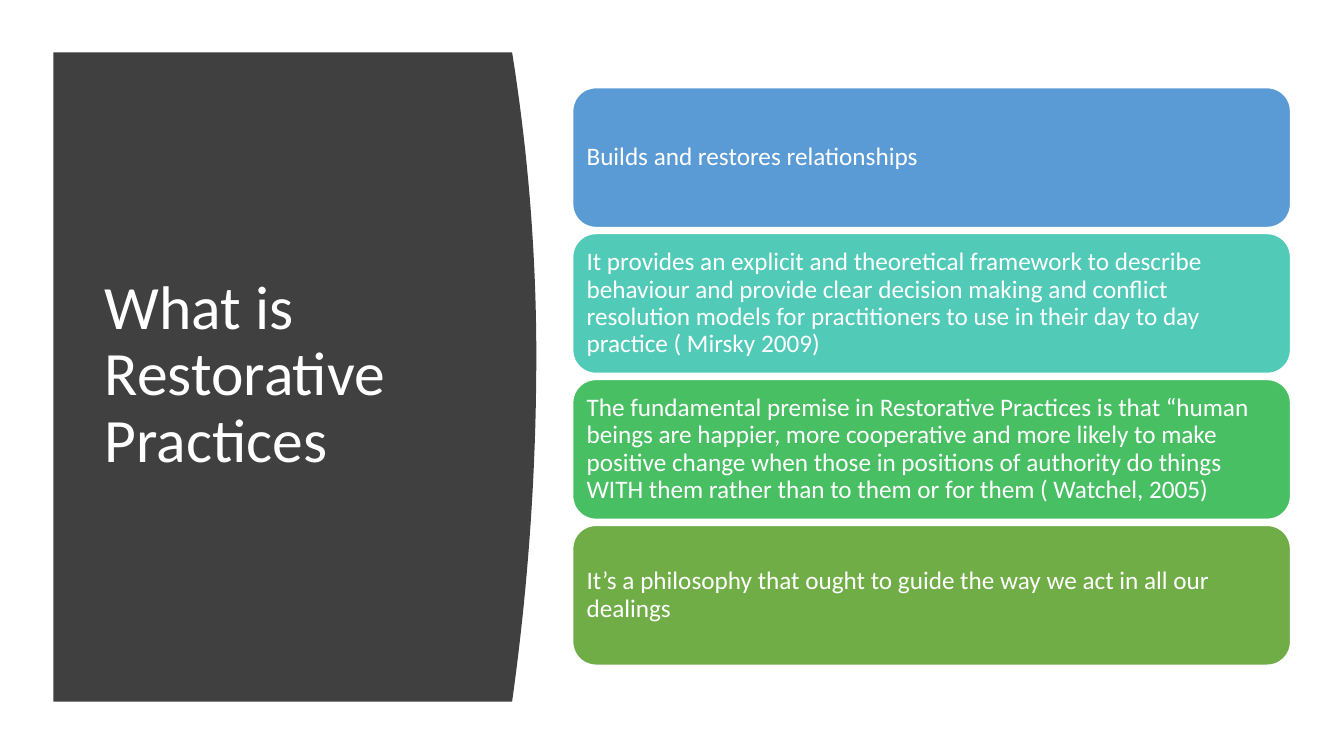
from pptx import Presentation
from pptx.dml.color import RGBColor
from pptx.enum.shapes import MSO_SHAPE
from pptx.enum.text import MSO_ANCHOR, PP_ALIGN
from pptx.util import Inches, Pt

COLORS = {
    "panel": "404040",
    "text": "FFFFFF",
    "blue": "5B9BD5",
    "teal": "52CAB8",
    "green": "49BF64",
    "olive": "70AD47",
}

CARDS = [
    ("blue", "Builds and restores relationships"),
    ("teal", "It provides an explicit and theoretical framework to describe behaviour "
             "and provide clear decision making and conflict resolution models for "
             "practitioners to use in their day to day practice ( Mirsky 2009)"),
    ("green", "The fundamental premise in Restorative Practices is that “human beings "
              "are happier, more cooperative and more likely to make positive change "
              "when those in positions of authority do things WITH them rather than to "
              "them or for them ( Watchel, 2005)"),
    ("olive", "It’s a philosophy that ought to guide the way we act in all our dealings"),
]


def color(name):
    """Return the named palette colour."""
    return RGBColor.from_string(COLORS[name])


def write_text(shape, text, size, inset_x, inset_y):
    """Fill a shape with one left-aligned, vertically centred paragraph."""
    frame = shape.text_frame
    frame.text = text
    frame.word_wrap = True
    frame.vertical_anchor = MSO_ANCHOR.MIDDLE
    frame.margin_left = frame.margin_right = Inches(inset_x)
    frame.margin_top = frame.margin_bottom = Inches(inset_y)
    paragraph = frame.paragraphs[0]
    paragraph.alignment = PP_ALIGN.LEFT
    paragraph.line_spacing = 0.9
    font = paragraph.runs[0].font
    font.name = "Calibri"
    font.size = Pt(size)
    font.color.rgb = color("text")


def add_title_panel(slide, left, top, width, height):
    """Draw the dark panel with a bulging right edge and place the title on it."""
    bulge, apex, steps = 0.24, 3.01, 40
    edge = []
    for step in range(steps + 1):
        y = height * step / steps
        reach = apex if y < apex else height - apex
        x = width - bulge * ((y - apex) / reach) ** 2
        edge.append((Inches(left + x), Inches(top + y)))
    builder = slide.shapes.build_freeform(Inches(left), Inches(top))
    builder.add_line_segments(edge + [(Inches(left), Inches(top + height))], close=True)
    panel = builder.convert_to_shape()
    panel.shadow.inherit = False
    panel.fill.solid()
    panel.fill.fore_color.rgb = color("panel")
    panel.line.fill.background()

    title = slide.shapes.title
    title.left, title.top = Inches(left + 0.41), Inches(top + 0.59)
    title.width, title.height = Inches(3.74), Inches(5.24)
    write_text(title, "What is Restorative Practices", 44, 0.1, 0.05)
    tree = slide.shapes._spTree
    tree.remove(panel._element)
    tree.insert(tree.index(title._element), panel._element)


def add_cards(slide, left, top, width, height):
    """Stack the rounded statement cards evenly in the given box."""
    gap = 0.06
    card_height = (height - gap * (len(CARDS) - 1)) / len(CARDS)
    for index, (fill, text) in enumerate(CARDS):
        card = slide.shapes.add_shape(
            MSO_SHAPE.ROUNDED_RECTANGLE,
            Inches(left), Inches(top + index * (card_height + gap)),
            Inches(width), Inches(card_height))
        card.shadow.inherit = False
        card.fill.solid()
        card.fill.fore_color.rgb = color(fill)
        card.line.color.rgb = color("text")
        card.line.width = Pt(1)
        write_text(card, text, 18, 0.07, 0.07)


def main():
    """Build and save the slide."""
    presentation = Presentation()
    presentation.slide_width = Inches(13.33)
    presentation.slide_height = Inches(7.5)
    slide = presentation.slides.add_slide(presentation.slide_layouts[5])
    add_title_panel(slide, 0.53, 0.52, 4.79, 6.44)
    add_cards(slide, 5.68, 0.87, 7.12, 5.73)
    presentation.save("out.pptx")


if __name__ == "__main__":
    main()
